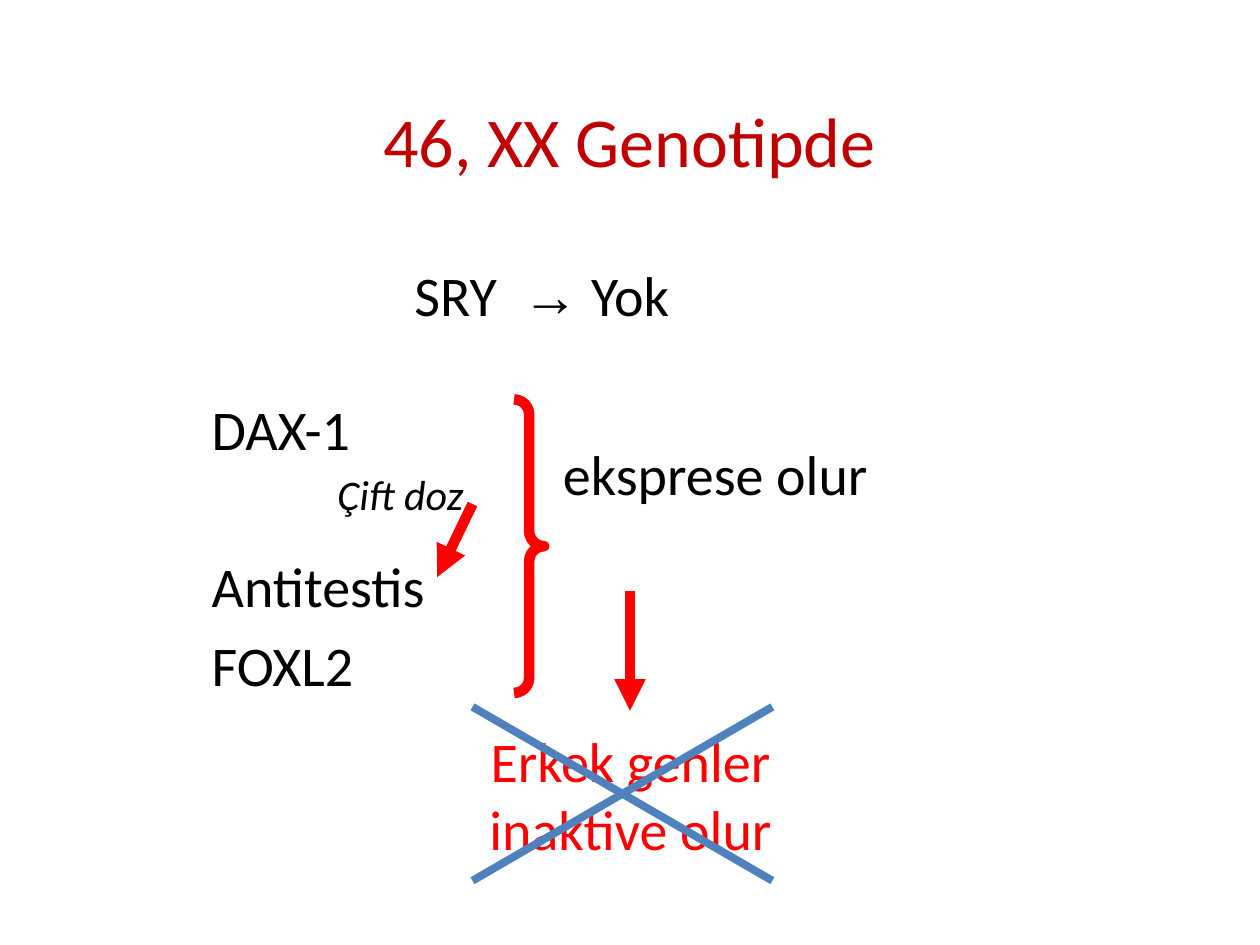
from collections import namedtuple

from pptx import Presentation
from pptx.dml.color import RGBColor
from pptx.enum import shapes, text
from pptx.oxml import xmlchemy
from pptx.util import Inches, Pt

COLORS = {"title": "C00000", "text": "000000", "accent": "FF0000", "cross": "4F81BD"}
SPACE_BEFORE = Pt(6.4)
Box = namedtuple("Box", "left top width height")


def inch_box(*lengths):
    return Box(*(Inches(length) for length in lengths))


def place(shape, box):
    shape.left, shape.top, shape.width, shape.height = box


def add_run(paragraph, wording, color="text", size=32, font="Calibri", italic=None):
    run = paragraph.add_run()
    run.text = wording
    run.font.name, run.font.size, run.font.italic = font, Pt(size), italic
    run.font.color.rgb = RGBColor.from_string(COLORS[color])
    return run


def add_label(slide, box, wrap=True, space_before=SPACE_BEFORE):
    """Add an empty text box and return its paragraph."""
    frame = slide.shapes.add_textbox(*box).text_frame
    frame.word_wrap = wrap
    paragraph = frame.paragraphs[0]
    paragraph.space_before = space_before
    return paragraph


def add_line(slide, start, end, color, width, arrow=False):
    line = slide.shapes.add_connector(shapes.MSO_CONNECTOR.STRAIGHT, *start, *end)
    line.line.color.rgb = RGBColor.from_string(COLORS[color])
    line.line.width = Pt(width)
    if arrow:
        head = xmlchemy.OxmlElement("a:tailEnd")
        head.set("type", "triangle")
        line.line._get_or_add_ln().append(head)
    line._element.spPr.append(xmlchemy.OxmlElement("a:effectLst"))


def fill_title(slide, box):
    title = slide.shapes.title
    place(title, box)
    frame = title.text_frame
    frame.auto_size = text.MSO_AUTO_SIZE.NONE
    frame.vertical_anchor = text.MSO_ANCHOR.MIDDLE
    heading = frame.paragraphs[0]
    heading.alignment = text.PP_ALIGN.CENTER
    heading.space_before = Pt(8)
    add_run(heading, "46, XX Genotipde", "title", 40)


def add_sry_status(slide, box):
    status = add_label(slide, box)
    add_run(status, "SRY")
    gap = add_run(status, " ")
    gap.font._element.set("spc", "720")  # widens the gap before the arrow
    add_run(status, "→", font="Arial")
    add_run(status, " Yok")


def fill_genes(slide, box):
    body = slide.placeholders[1]
    place(body, box)
    frame = body.text_frame
    frame.auto_size = text.MSO_AUTO_SIZE.NONE
    genes = [("DAX-1", SPACE_BEFORE), ("Antitestis", Pt(51.5)), ("FOXL2", SPACE_BEFORE)]
    for index, (gene, space_before) in enumerate(genes):
        paragraph = frame.add_paragraph() if index else frame.paragraphs[0]
        paragraph.space_before = space_before
        paragraph._p.get_or_add_pPr().append(xmlchemy.OxmlElement("a:buNone"))
        add_run(paragraph, gene)


def add_double_dose(slide, box):
    """Italic note with an arrow down to the antitestis gene."""
    note = add_label(slide, box, wrap=False, space_before=Pt(0))
    add_run(note, "Çift doz", size=24, italic=True)
    start = (box.left + Inches(1.17), box.top + Inches(0.33))
    end = (box.left + Inches(0.89), box.top + Inches(0.91))
    add_line(slide, start, end, "accent", 6, arrow=True)


def add_expression(slide, box):
    """Brace on the left, its label at the right and an arrow below."""
    brace = slide.shapes.add_shape(
        shapes.MSO_SHAPE.RIGHT_BRACE, box.left, box.top, Inches(0.24), box.height)
    brace.adjustments[0], brace.adjustments[1] = 0.5, 0.5
    brace.shadow.inherit = False
    brace.fill.background()
    brace.line.color.rgb = RGBColor.from_string(COLORS["accent"])
    brace.line.width = Pt(6)
    offset = Inches(0.29)
    label = add_label(slide, Box(box.left + offset, box.top + Inches(0.27),
                                 box.width - offset, Inches(0.71)))
    add_run(label, "eksprese olur")
    arrow_x, arrow_top = box.left + Inches(0.92), box.top + Inches(1.52)
    add_line(slide, (arrow_x, arrow_top), (arrow_x, arrow_top + Inches(0.95)),
             "accent", 6, arrow=True)


def add_crossed_outcome(slide, box):
    outcome = add_label(slide, box)
    outcome.alignment = text.PP_ALIGN.CENTER
    add_run(outcome, "Erkek genler inaktive olur", "accent")
    left, right = box.left + Inches(0.4), box.left + Inches(2.78)
    top, bottom = box.top - Inches(0.11), box.top + Inches(1.27)
    add_line(slide, (left, top), (right, bottom), "cross", 4.5)
    add_line(slide, (right, top), (left, bottom), "cross", 4.5)


def main():
    deck = Presentation()
    deck.slide_width, deck.slide_height = Inches(10), Inches(7.5)
    slide = deck.slides.add_slide(deck.slide_layouts[1])
    fill_title(slide, inch_box(0.83, 0.36, 8.33, 1.49))
    add_sry_status(slide, inch_box(3.19, 2.02, 3.7, 0.63))
    fill_genes(slide, inch_box(1.58, 3.08, 2.58, 2.58))
    add_expression(slide, inch_box(4.08, 3.17, 3.76, 2.33))
    add_crossed_outcome(slide, inch_box(3.35, 5.72, 3.31, 1.1))
    add_double_dose(slide, inch_box(2.58, 3.67, 1.33, 0.5))
    deck.save("out.pptx")


if __name__ == "__main__":
    main()
